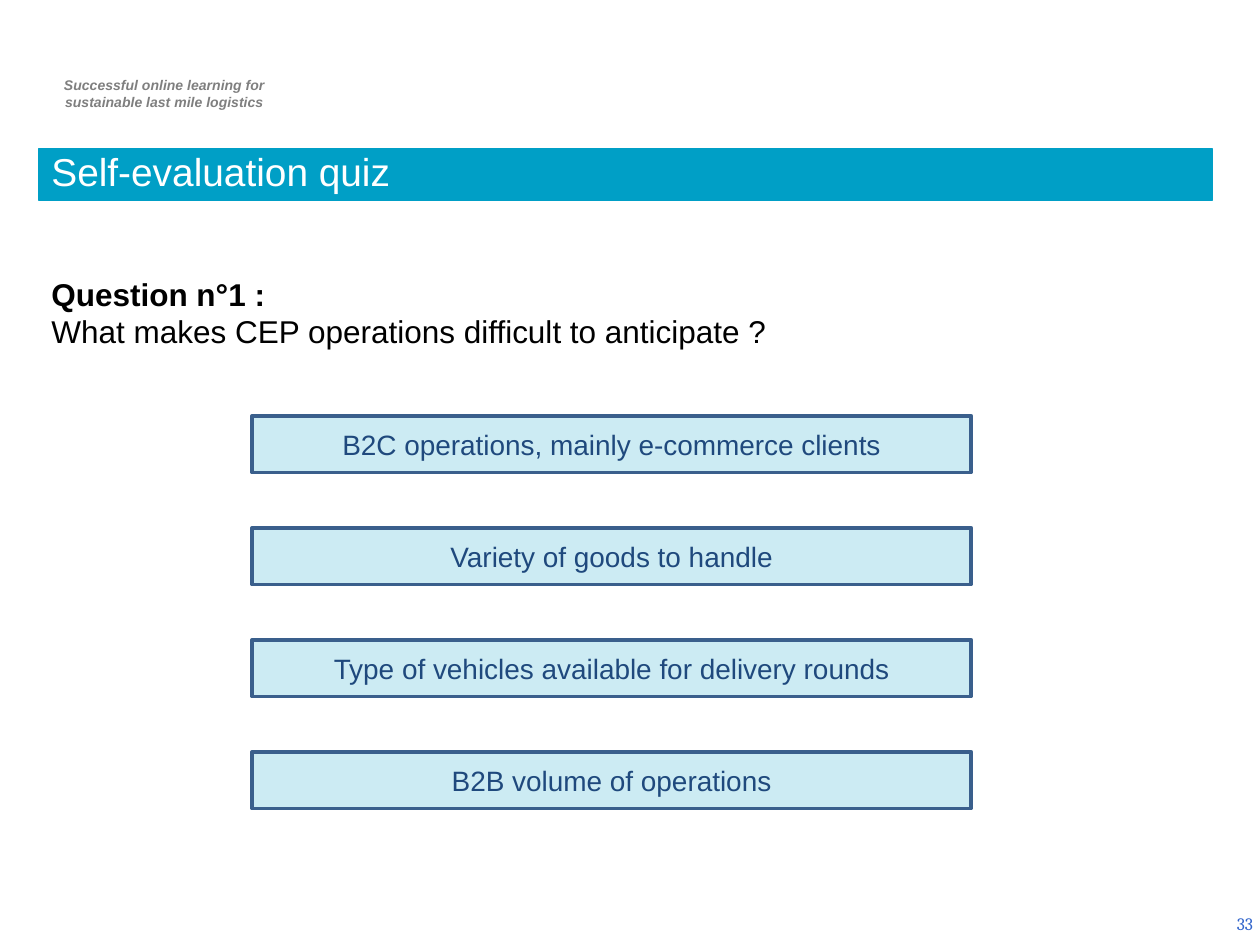
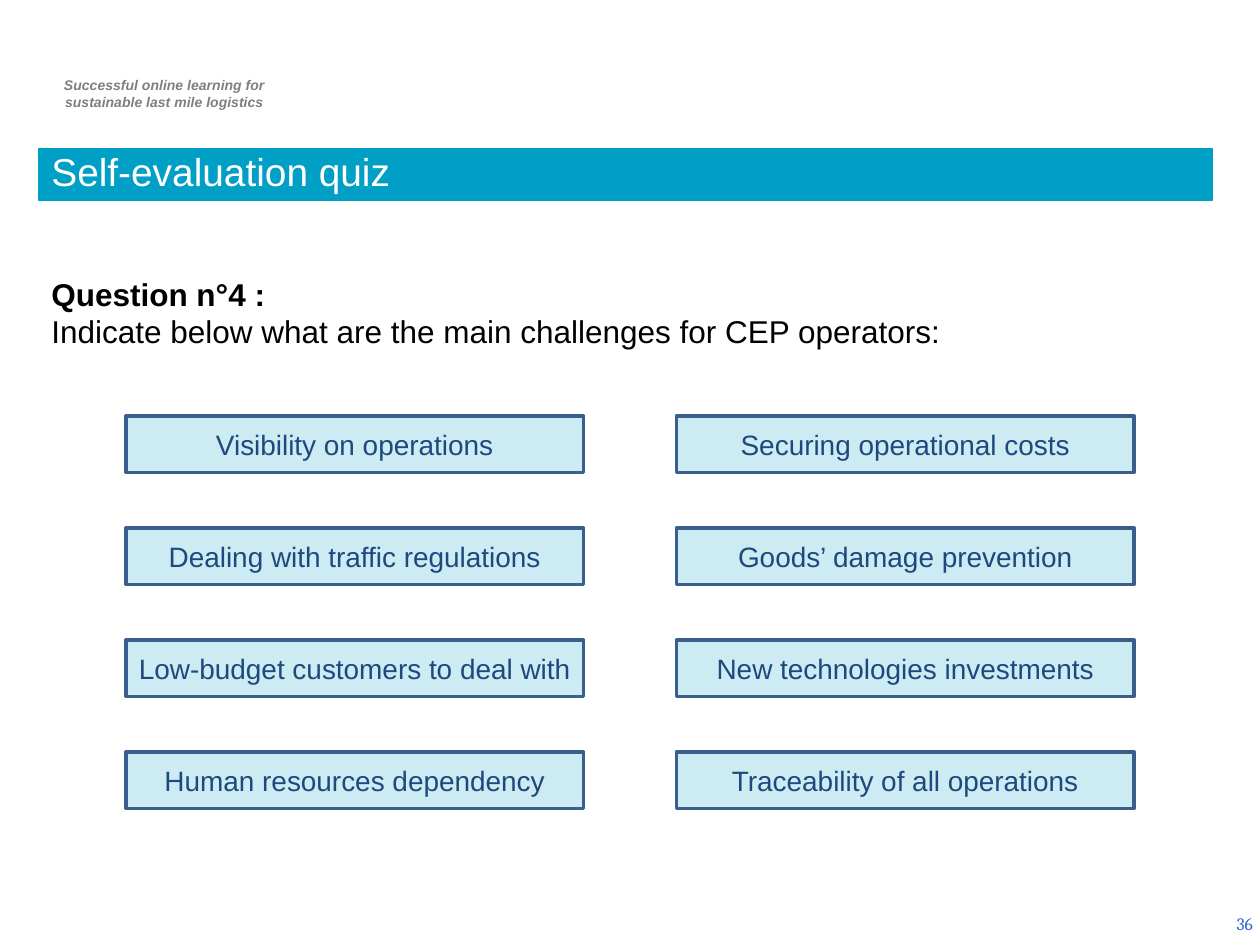
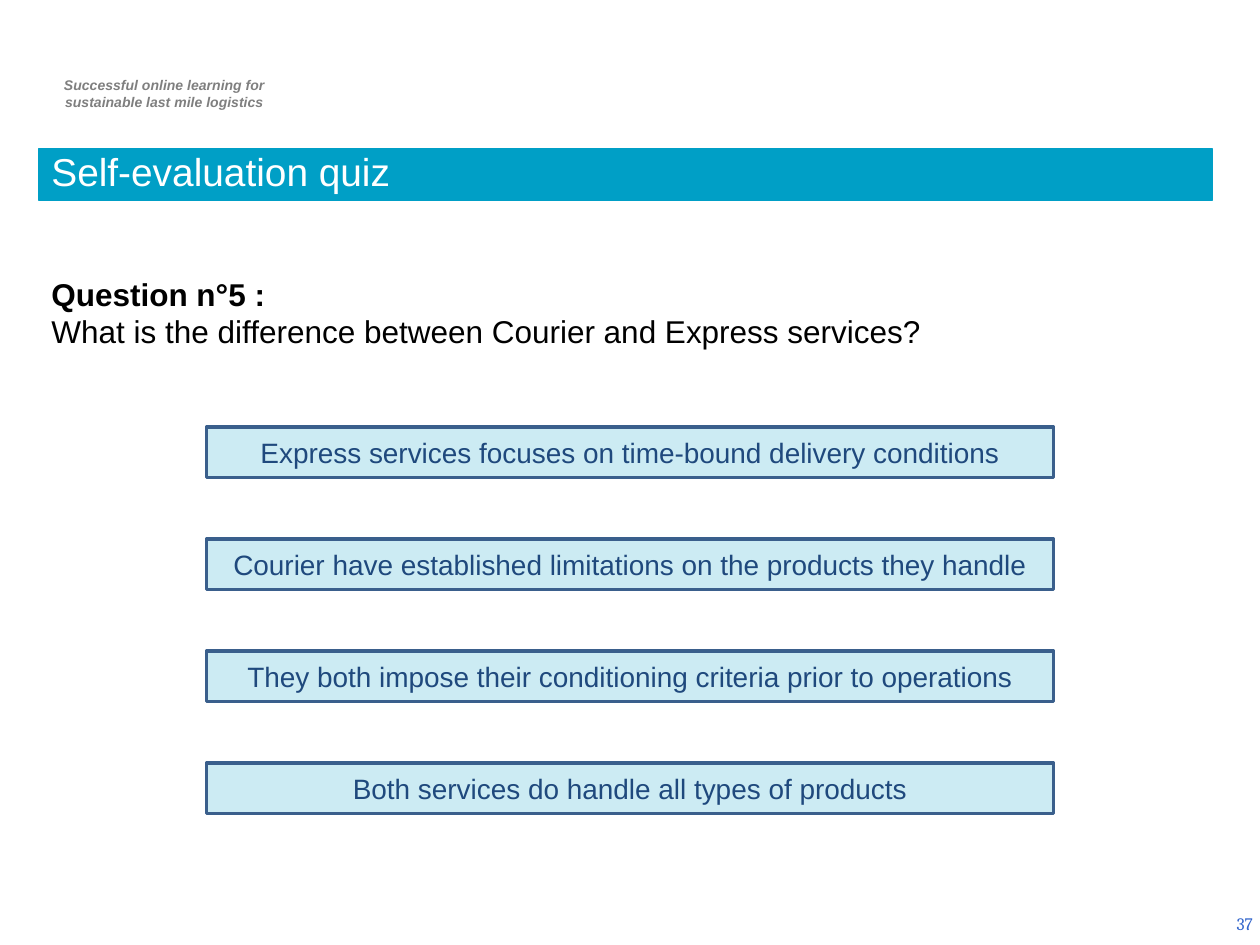
from lxml import etree
from pptx import Presentation
from pptx.dml.color import RGBColor
from pptx.enum.shapes import MSO_SHAPE
from pptx.enum.text import MSO_ANCHOR, PP_ALIGN
from pptx.oxml.ns import qn
from pptx.util import Pt

RECTANGLE = MSO_SHAPE.RECTANGLE
TOP, MIDDLE, BOTTOM = MSO_ANCHOR.TOP, MSO_ANCHOR.MIDDLE, MSO_ANCHOR.BOTTOM
LEFT, CENTER, RIGHT = PP_ALIGN.LEFT, PP_ALIGN.CENTER, PP_ALIGN.RIGHT

BAND_BLUE = RGBColor(0x00, 0x9F, 0xC6)
BORDER_BLUE = RGBColor(0x3A, 0x5F, 0x8C)
ANSWER_BLUE = RGBColor(0x1F, 0x49, 0x7D)
NUMBER_BLUE = RGBColor(0x33, 0x66, 0xCC)
GREY = RGBColor(0x7F, 0x7F, 0x7F)
BLACK = RGBColor(0x00, 0x00, 0x00)
WHITE = RGBColor(0xFF, 0xFF, 0xFF)

TAGLINE = ["Successful online learning for", "sustainable last mile logistics"]
TITLE = "Self-evaluation quiz"

# Boxes are left, top, width, height in points
TAGLINE_BOX = (20.9, 40.3, 146.2, 26.6)
NUMBER_BOX = (555, 513.4, 168, 28.8)
TITLE_BOX = (22.3, 85, 670.3, 29.5)
QUESTION_BOX = (22.3, 153.4, 670.3, 51)
TITLE_INDENT = 58.3
ANSWER_PITCH = 64
ANSWER_OPACITY = 20

QUIZ = [
    {
        "page": 33,
        "question": ["Question n°1 :", "What makes CEP operations difficult to anticipate ?"],
        "first_answer": (144, 237.6, 411, 32.4),
        "column_pitch": 0,
        "columns": [[
            "B2C operations, mainly e-commerce clients",
            "Variety of goods to handle",
            "Type of vehicles available for delivery rounds",
            "B2B volume of operations",
        ]],
    },
    {
        "page": 36,
        "question": ["Question n°4 :",
                     "Indicate below what are the main challenges for CEP operators:"],
        "first_answer": (72, 237.6, 261.4, 32.4),
        "column_pitch": 314.6,
        "columns": [
            [
                "Visibility on operations",
                "Dealing with traffic regulations",
                "Low-budget customers to deal with",
                "Human resources dependency",
            ],
            [
                "Securing operational costs",
                "Goods’ damage prevention",
                "New technologies investments",
                "Traceability of all operations",
            ],
        ],
    },
    {
        "page": 37,
        "question": ["Question n°5 :",
                     "What is the difference between Courier and Express services?"],
        "first_answer": (118, 244, 484, 28.8),
        "column_pitch": 0,
        "columns": [[
            "Express services focuses on time-bound delivery conditions",
            "Courier have established limitations on the products they handle",
            "They both impose their conditioning criteria prior to operations",
            "Both services do handle all types of products",
        ]],
    },
]


def write(shape, lines, size, color, font="Arial", align=LEFT, anchor=TOP):
    """Fill the shape with one paragraph per line and return the paragraphs."""
    frame = shape.text_frame
    frame.word_wrap = True
    frame.vertical_anchor = anchor
    frame.text = "\n".join(lines)
    for paragraph in frame.paragraphs:
        paragraph.alignment = align
        for run in paragraph.runs:
            run.font.name = font
            run.font.size = Pt(size)
            run.font.color.rgb = color
    return frame.paragraphs


def add_text(slide, box, lines, size, color, **style):
    textbox = slide.shapes.add_textbox(*map(Pt, box))
    return write(textbox, lines, size, color, **style)


def add_rectangle(slide, box, line_color, line_width):
    rectangle = slide.shapes.add_shape(RECTANGLE, *map(Pt, box))
    rectangle.shadow.inherit = False
    rectangle.fill.solid()
    rectangle.fill.fore_color.rgb = BAND_BLUE
    rectangle.line.color.rgb = line_color
    rectangle.line.width = Pt(line_width)
    return rectangle


def add_frame(slide, page):
    """Add the tagline, page number and title band that every slide carries."""
    for paragraph in add_text(slide, TAGLINE_BOX, TAGLINE, 8, GREY, align=CENTER):
        paragraph.runs[0].font.bold = True
        paragraph.runs[0].font.italic = True
    add_text(slide, NUMBER_BOX, [str(page)], 10, NUMBER_BLUE,
             font="Cambria", align=RIGHT, anchor=MIDDLE)
    band = add_rectangle(slide, TITLE_BOX, BAND_BLUE, 0.75)
    title = write(band, [TITLE], 22.2, WHITE, anchor=BOTTOM)[0]
    title.line_spacing = 0.8
    properties = title._p.get_or_add_pPr()
    properties.set("marL", str(Pt(TITLE_INDENT)))
    properties.set("indent", str(-Pt(TITLE_INDENT)))


def add_answer(slide, box, answer):
    rectangle = add_rectangle(slide, box, BORDER_BLUE, 2)
    fill_color = rectangle.element.spPr.find(qn("a:solidFill"))[0]
    etree.SubElement(fill_color, qn("a:alpha"), val=str(ANSWER_OPACITY * 1000))
    write(rectangle, [answer], 16, ANSWER_BLUE, align=CENTER, anchor=MIDDLE)


def add_quiz_slide(presentation, quiz):
    slide = presentation.slides.add_slide(presentation.slide_layouts[6])
    add_frame(slide, quiz["page"])
    heading = add_text(slide, QUESTION_BOX, quiz["question"], 18, BLACK)[0]
    heading.runs[0].font.bold = True
    left, top, width, height = quiz["first_answer"]
    for column, answers in enumerate(quiz["columns"]):
        for row, answer in enumerate(answers):
            box = (left + column * quiz["column_pitch"], top + row * ANSWER_PITCH, width, height)
            add_answer(slide, box, answer)


def main():
    presentation = Presentation()
    presentation.slide_width = Pt(720)
    presentation.slide_height = Pt(540)
    for quiz in QUIZ:
        add_quiz_slide(presentation, quiz)
    presentation.save("out.pptx")


if __name__ == "__main__":
    main()
